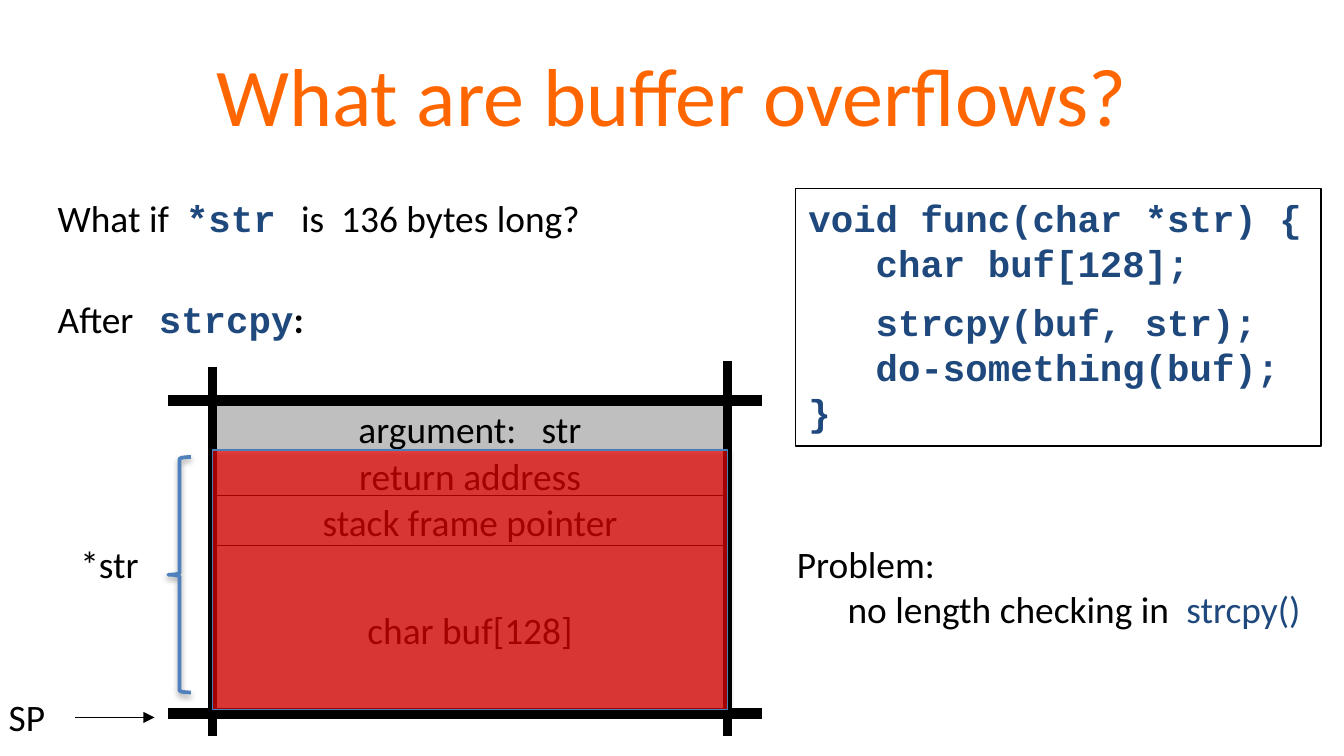
"""Build a slide that explains a buffer overflow on the stack."""
from lxml import etree
from pptx import Presentation
from pptx import util as u
from pptx.dml.color import RGBColor
from pptx.enum import shapes, text
from pptx.oxml import ns

BLACK = RGBColor(0x00, 0x00, 0x00)
ORANGE = RGBColor(0xFF, 0x66, 0x00)
NAVY = RGBColor(0x1F, 0x49, 0x7D)
GREY = RGBColor(0xBF, 0xBF, 0xBF)
RED = RGBColor(0xFF, 0x00, 0x00)
OVERLAY_EDGE = RGBColor(0x4B, 0x7E, 0xBC)
BRACE_BLUE = RGBColor(0x4F, 0x81, 0xBD)

BODY = ("Calibri", BLACK, False)
CODE = ("Courier New", NAVY, True)
COLON = ("Calibri", BLACK, True)
CALL = ("Calibri", NAVY, False)


def write(shape, paragraphs, align=text.PP_ALIGN.LEFT, anchor=text.MSO_ANCHOR.TOP):
    frame = shape.text_frame
    frame.word_wrap = False
    frame.vertical_anchor = anchor
    for index, pieces in enumerate(paragraphs):
        paragraph = frame.add_paragraph() if index else frame.paragraphs[0]
        paragraph.alignment = align
        for words, (font_name, color, bold) in pieces:
            run = paragraph.add_run()
            run.text = words
            run.font.name = font_name
            run.font.size = u.Pt(20)
            run.font.bold = bold
            run.font.color.rgb = color
    return frame.paragraphs


def add_line(x1, y1, x2, y2, width):
    line = slide.shapes.add_connector(
        shapes.MSO_CONNECTOR.STRAIGHT, u.Cm(x1), u.Cm(y1), u.Cm(x2), u.Cm(y2))
    line.line.color.rgb = BLACK
    line.line.width = u.Pt(width)
    etree.SubElement(line._element.spPr, ns.qn("a:effectLst"))
    return line


presentation = Presentation()
presentation.slide_width = u.Cm(25.4)
presentation.slide_height = u.Cm(14.29)
slide = presentation.slides.add_slide(presentation.slide_layouts[5])

title = slide.shapes.title
title.left, title.top, title.width, title.height = u.Cm(1.27), u.Cm(0.58), u.Cm(22.86), u.Cm(2.38)
title.text_frame.text = "What are buffer overflows?"
title.text_frame.vertical_anchor = text.MSO_ANCHOR.MIDDLE
title_paragraph = title.text_frame.paragraphs[0]
title_paragraph.alignment = text.PP_ALIGN.CENTER
title_font = title_paragraph.runs[0].font
title_font.name = "Calibri"
title_font.size = u.Pt(44)
title_font.color.rgb = ORANGE

code_box = slide.shapes.add_shape(
    shapes.MSO_SHAPE.RECTANGLE, u.Cm(15.03), u.Cm(3.56), u.Cm(9.94), u.Cm(4.87))
code_box.shadow.inherit = False
code_box.fill.background()
code_box.line.color.rgb = BLACK
code_box.line.width = u.Pt(0.75)
code_lines = [
    "void func(char *str) {",
    "   char buf[128];",
    "   strcpy(buf, str);",
    "   do-something(buf);",
    "}",
]
code_paragraphs = write(code_box, [[(line, CODE)] for line in code_lines])
for paragraph in code_paragraphs:
    paragraph.line_spacing = u.Pt(24)
code_paragraphs[2].space_before = u.Pt(8)

question = slide.shapes.add_textbox(u.Cm(0.84), u.Cm(3.56), u.Cm(10.46), u.Cm(3))
question_paragraphs = write(question, [
    [("What if  ", BODY), ("*str", CODE), ("   is  136 bytes long?", BODY)],
    [("After   ", BODY), ("strcpy", CODE), (":", COLON)],
])
question_paragraphs[1].space_before = u.Pt(30)

stack_left, stack_width = 4.02, 9.73
stack_right = stack_left + stack_width
stack_top, stack_bottom = 7.57, 13.49
stack_rows = [
    ("argument:   str", stack_top, 1.07),
    ("return address", 8.51, 0.97),
    ("stack frame pointer", 9.37, 0.97),
    ("char buf[128]", 10.31, 3.18),
]
for label, top, height in stack_rows:
    row = slide.shapes.add_shape(
        shapes.MSO_SHAPE.RECTANGLE, u.Cm(stack_left), u.Cm(top), u.Cm(stack_width), u.Cm(height))
    row.shadow.inherit = False
    row.fill.solid()
    row.fill.fore_color.rgb = GREY
    row.line.color.rgb = BLACK
    row.line.width = u.Pt(0.75)
    write(row, [[(label, BODY)]], text.PP_ALIGN.CENTER, text.MSO_ANCHOR.MIDDLE)

pointer_label = slide.shapes.add_textbox(u.Cm(-0.1), u.Cm(13), u.Cm(1.22), u.Cm(1.12))
write(pointer_label, [[("SP", BODY)]], text.PP_ALIGN.CENTER)
pointer_arrow = add_line(1.42, 13.56, 2.92, 13.56, 0.75)
etree.SubElement(pointer_arrow.line._get_or_add_ln(), ns.qn("a:tailEnd"), type="triangle")

for y in (stack_bottom, stack_top):
    add_line(3.18, y, 14.4, y, 6)
for x, top in ((stack_left, 6.93), (stack_right, 6.83)):
    add_line(x, top, x, 7.77, 4.5)
    add_line(x, 12.42, x, 13.92, 4.5)

stack_frame = slide.shapes.add_shape(
    shapes.MSO_SHAPE.RECTANGLE, u.Cm(stack_left), u.Cm(stack_top),
    u.Cm(stack_width), u.Cm(stack_bottom - stack_top))
stack_frame.shadow.inherit = False
stack_frame.fill.background()
stack_frame.line.color.rgb = BLACK
stack_frame.line.width = u.Pt(4.5)

overflow = slide.shapes.add_shape(
    shapes.MSO_SHAPE.RECTANGLE, u.Cm(stack_left), u.Cm(8.51), u.Cm(stack_width), u.Cm(4.9))
overflow.fill.solid()
overflow.fill.fore_color.rgb = RED
overflow_color = overflow._element.spPr.find(".//" + ns.qn("a:srgbClr"))
etree.SubElement(overflow_color, ns.qn("a:alpha"), val="64000")
overflow.line.color.rgb = OVERLAY_EDGE
overflow.line.width = u.Pt(0.75)

brace = slide.shapes.add_shape(
    shapes.MSO_SHAPE.LEFT_BRACE, u.Cm(3.18), u.Cm(8.64), u.Cm(0.43), u.Cm(4.45))
brace.fill.background()
brace.line.color.rgb = BRACE_BLUE
brace.line.width = u.Pt(2)

brace_label = slide.shapes.add_textbox(u.Cm(1.27), u.Cm(10.11), u.Cm(1.63), u.Cm(1.12))
write(brace_label, [[("*str", BODY)]])

problem = slide.shapes.add_textbox(u.Cm(14.81), u.Cm(10.11), u.Cm(10.11), u.Cm(1.96))
problem_paragraphs = write(problem, [
    [("Problem:", BODY)],
    [("no length checking in  ", BODY), ("strcpy()", CALL)],
])
problem_paragraphs[1]._p.get_or_add_pPr().set("marL", str(u.Cm(0.96)))

presentation.save("out.pptx")
